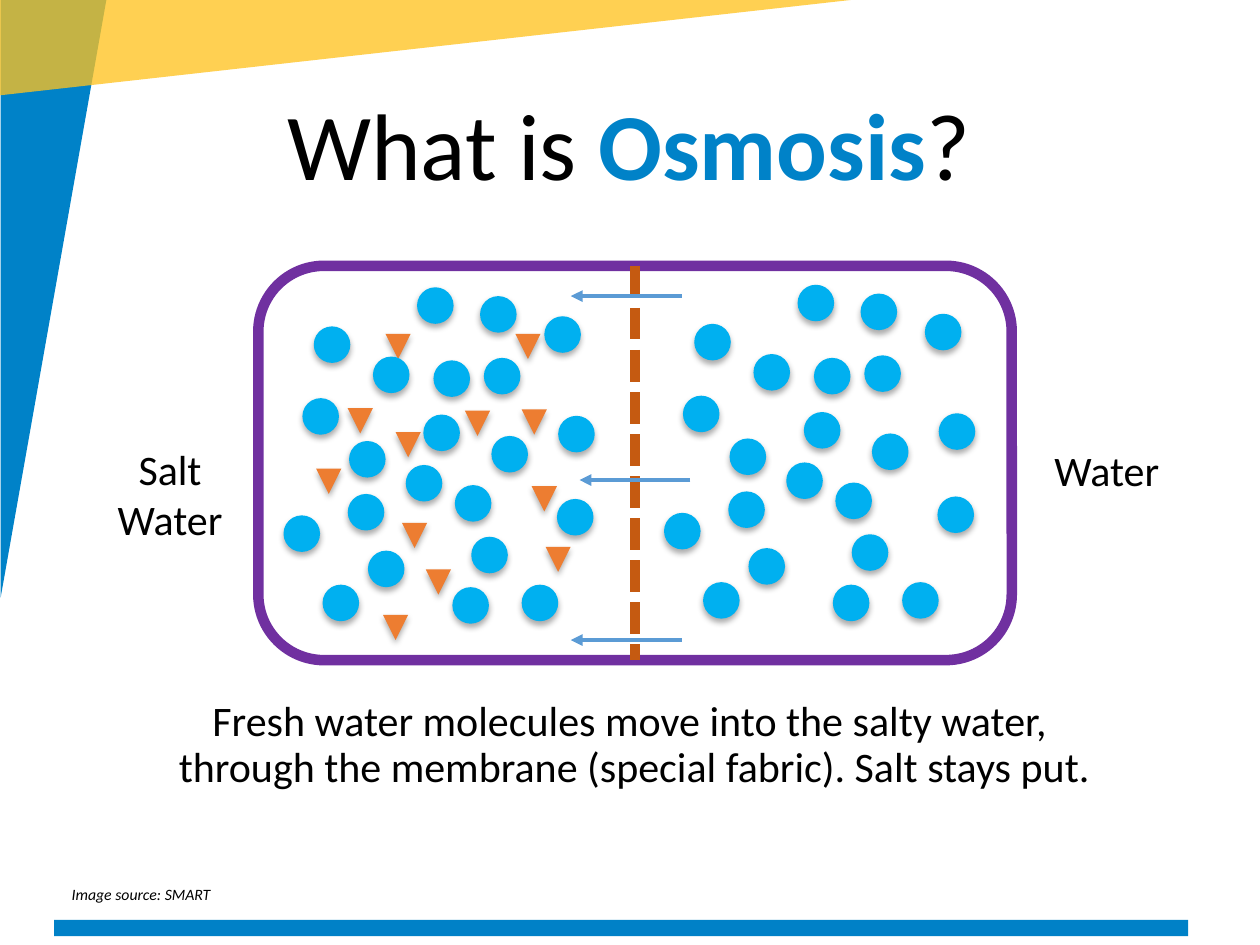
from dataclasses import dataclass
from typing import Any

from lxml import etree
from pptx import Presentation
from pptx import util as u
from pptx.dml.color import RGBColor
from pptx.enum import dml, shapes, text
from pptx.oxml import ns

HUES = {
    "black": "000000", "blue": "0082C8", "bar": "0081C7", "gold": "FFC31E",
    "water": "00B0F0", "salt": "ED7D31", "tank": "7030A0",
    "skin": "C55A11", "flow": "5B9BD5",
}
KIND = shapes.MSO_SHAPE
LEFT, MID = text.PP_ALIGN.LEFT, text.PP_ALIGN.CENTER


@dataclass
class Box:
    x: float
    y: float
    w: float
    h: float


@dataclass
class Grain:
    kind: Any
    size: float
    hue: str
    flip: str = ""


@dataclass
class Label:
    words: str
    box: Box
    form: dict
    align: Any = LEFT
    wrap: bool = True


WATER = Grain(KIND.OVAL, 0.29, "water")
SALT = Grain(KIND.ISOSCELES_TRIANGLE, 0.2, "salt", "flipV")
DROPS = [
    (2.76, 3.92), (3.61, 3.85), (2.25, 4.09), (3.22, 3.69), (3.9, 3.46),
    (4.42, 3.96), (3.74, 4.26), (2.56, 4.64), (2.49, 2.59), (3.44, 2.86),
    (2.96, 2.83), (3.31, 2.28), (3.81, 2.35), (4.32, 2.51), (3.84, 2.84),
    (4.43, 3.3), (2.77, 3.5), (3.36, 3.29), (2.4, 3.16), (2.92, 4.37),
    (3.59, 4.66), (4.14, 4.64),
]
SALTS = [
    (2.51, 3.72), (3.04, 4.88), (3.19, 4.15), (4.33, 4.34), (4.22, 3.86),
    (3.38, 4.52), (3.06, 2.65), (2.76, 3.24), (3.69, 3.26), (4.14, 3.25),
    (4.09, 2.65), (3.14, 3.43),
]
SHIFT = (3.02, -0.02)
FLOWS = [(5.41, 5.08), (5.41, 2.35), (5.48, 3.81)]
REACH = 0.88
BODY = {"name": "Calibri", "size": u.Pt(24), "bold": False}
NOTE = {"name": "Calibri", "size": u.Pt(9), "italic": True}
LABELS = [
    Label("Water", Box(8.27, 3.48, 1.04, 0.5), BODY),
    Label("Salt Water", Box(0.83, 3.47, 1.04, 0.91), BODY, MID),
    Label("Image source: SMART", Box(0.47, 6.97, 1.34, 0.25), NOTE, wrap=False),
]


def rgb(hue: str) -> RGBColor:
    return RGBColor.from_string(HUES[hue])


def span(box: Box) -> list:
    return [u.Inches(v) for v in (box.x, box.y, box.w, box.h)]


def node(root, tag: str, **attrs):
    return etree.SubElement(root, ns.qn(tag), attrs)


def apply(item, form: dict) -> None:
    for key, val in form.items():
        setattr(item, key, val)


def place(item, box: Box) -> None:
    apply(item, dict(zip(("left", "top", "width", "height"), span(box))))


def shape(page, kind, box: Box, hue: str, turn: int = 0, flip: str = ""):
    item = page.shapes.add_shape(kind, *span(box))
    item.shadow.inherit = False
    item.fill.solid()
    item.fill.fore_color.rgb = rgb(hue)
    item.line.fill.background()
    item.rotation = turn
    if flip:
        item.element.spPr.find(ns.qn("a:xfrm")).set(flip, "1")
    return item


def grain(page, kind: Grain, x: float, y: float) -> None:
    box = Box(x, y, kind.size, kind.size)
    item = shape(page, kind.kind, box, kind.hue, flip=kind.flip)
    glow = item.element.spPr.find(ns.qn("a:effectLst"))
    cast = node(glow, "a:outerShdw", blurRad=str(u.Pt(3.5)),
                dist=str(u.Pt(2.2)), dir="5400000", rotWithShape="0")
    node(node(cast, "a:srgbClr", val=HUES["black"]), "a:alpha", val="32000")


def line(page, start: tuple, end: tuple, hue: str, width: float):
    ends = [u.Inches(v) for v in (*start, *end)]
    item = page.shapes.add_connector(shapes.MSO_CONNECTOR.STRAIGHT, *ends)
    item.line.color.rgb = rgb(hue)
    item.line.width = u.Pt(width)
    return item


def flat(item) -> None:
    node(item.element.spPr, "a:effectLst")


def write(para, words: str, form: dict, hue: str = "black") -> None:
    run = para.add_run()
    run.text = words
    apply(run.font, form)
    run.font.color.rgb = rgb(hue)


def label(page, spec_: Label) -> None:
    frame = page.shapes.add_textbox(*span(spec_.box)).text_frame
    frame.word_wrap = spec_.wrap
    para = frame.paragraphs[0]
    para.alignment = spec_.align
    write(para, spec_.words, spec_.form)


def title(page) -> None:
    item = page.shapes.title
    place(item, Box(2.18, 0.38, 6.09, 1.65))
    apply(item.text_frame, {"word_wrap": True, "auto_size": text.MSO_AUTO_SIZE.NONE,
                            "vertical_anchor": text.MSO_ANCHOR.MIDDLE})
    para = item.text_frame.paragraphs[0]
    apply(para, {"alignment": LEFT, "line_spacing": 0.85})
    form = {"name": "Calibri", "size": u.Pt(54)}
    for words, bold, hue in (("What is ", False, "black"),
                             ("Osmosis", True, "blue"), ("?", False, "black")):
        write(para, words, {**form, "bold": bold}, hue)


def body(page) -> None:
    item = page.placeholders[1]
    place(item, Box(0.97, 5.51, 8.13, 0.81))
    apply(item.text_frame, {"word_wrap": True, "auto_size": text.MSO_AUTO_SIZE.NONE})
    para = item.text_frame.paragraphs[0]
    apply(para, {"alignment": MID, "line_spacing": 0.9, "space_before": u.Pt(0)})
    props = para._p.get_or_add_pPr()
    props.set("marL", "0")
    props.set("indent", "0")
    node(props, "a:buNone")
    write(para, "Fresh water molecules move into the salty water, ", BODY)
    para.add_line_break()
    write(para, "through the membrane (special fabric). Salt stays put.", BODY)


def tank(page) -> None:
    for spot in SALTS:
        grain(page, SALT, *spot)
    for x, y in DROPS:
        grain(page, WATER, x, y)
    wall = shape(page, KIND.ROUNDED_RECTANGLE, Box(2.05, 2.11, 5.98, 3.13), "tank")
    wall.fill.background()
    wall.line.color.rgb = rgb("tank")
    wall.line.width = u.Pt(6)
    skin = line(page, (5.04, 2.11), (5.04, 5.24), "skin", 6)
    skin.line.dash_style = dml.MSO_LINE.SQUARE_DOT
    skin.begin_connect(wall, 0)
    skin.end_connect(wall, 2)
    flat(skin)
    for x, y in DROPS:
        grain(page, WATER, x + SHIFT[0], y + SHIFT[1])
    for x, y in FLOWS:
        flow = line(page, (x, y), (x - REACH, y), "flow", 2.25)
        node(flow.line._get_or_add_ln(), "a:tailEnd", type="triangle")
        flat(flow)


def main() -> None:
    deck = Presentation()
    apply(deck, {"slide_width": u.Inches(10), "slide_height": u.Inches(7.5)})
    page = deck.slides.add_slide(deck.slide_layouts[1])
    shape(page, KIND.RIGHT_TRIANGLE, Box(-1.95, 1.95, 4.75, 0.84), "blue", 90)
    band = shape(page, KIND.RIGHT_TRIANGLE, Box(-0.21, -0.02, 7.14, 0.8),
                 "gold", 180, "flipH")
    tint = band.element.spPr.find(ns.qn("a:solidFill"))[0]
    node(tint, "a:alpha", val="77000")
    shape(page, KIND.RECTANGLE, Box(0.43, 7.3, 9, 0.13), "bar")
    title(page)
    tank(page)
    body(page)
    for item in LABELS:
        label(page, item)
    deck.save("out.pptx")


if __name__ == "__main__":
    main()
